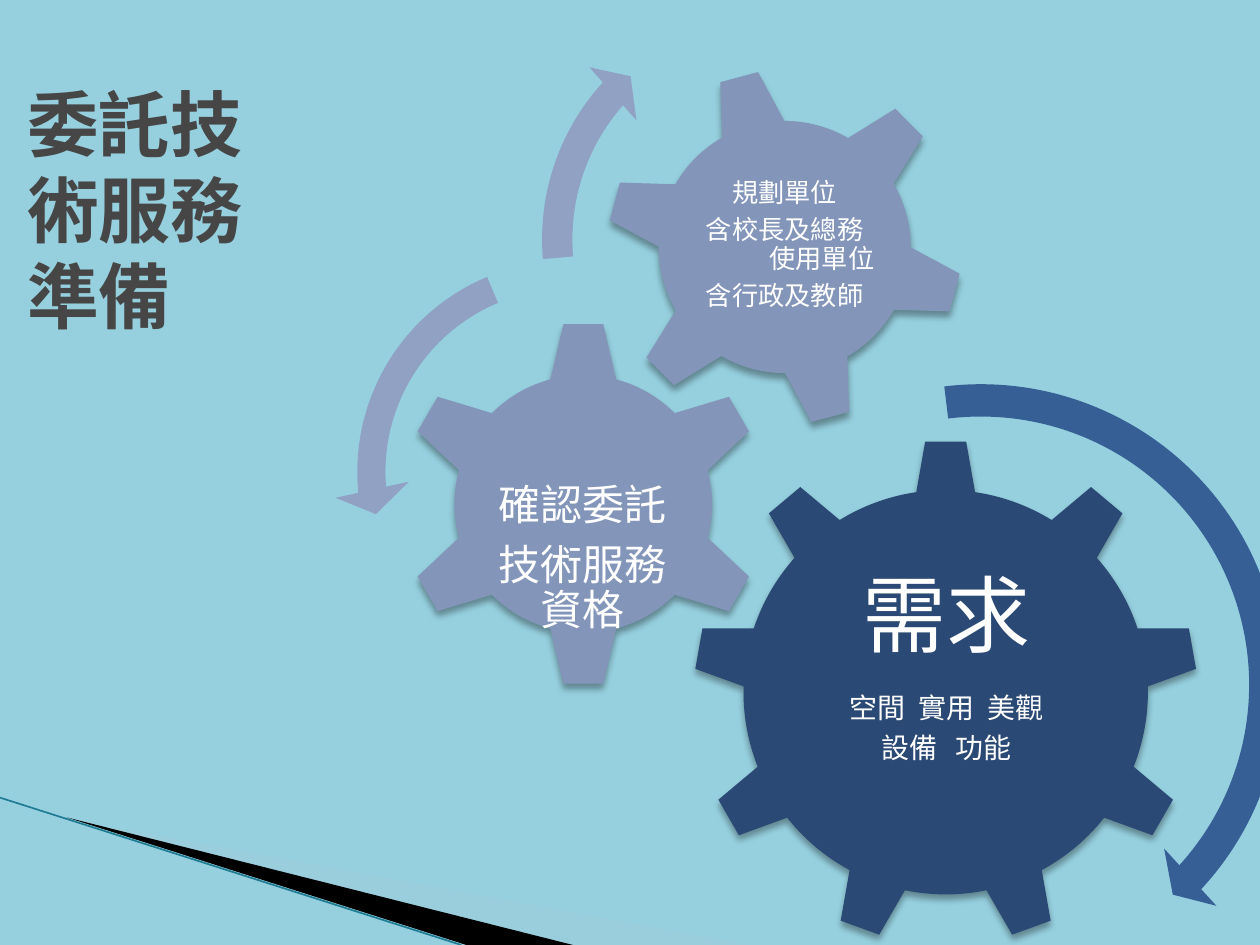
from lxml import etree
from pptx import Presentation
from pptx.dml.color import RGBColor
from pptx.enum.shapes import MSO_CONNECTOR, MSO_SHAPE as Preset
from pptx.enum.text import MSO_ANCHOR as Anchor, PP_ALIGN as Align
from pptx.oxml.ns import qn
from pptx.util import Cm, Pt

FONT = "DejaVu Sans Mono"
NAVY, BLUE, PALE_BLUE, LILAC = "2A4974", "365F96", "8396BA", "90A1C3"


def color(value):
    return RGBColor.from_string(value)


def paint(shape, fill):
    shape.shadow.inherit = False
    shape.fill.solid()
    shape.fill.fore_color.rgb = color(fill)
    shape.line.fill.background()


def set_alpha(parent, percent):
    etree.SubElement(parent, qn("a:alpha"), val=str(percent * 1000))


def add_preset(page, kind, left, top, size, fill):
    shape = page.shapes.add_shape(kind, Cm(left), Cm(top), Cm(size), Cm(size))
    paint(shape, fill)
    return shape


def add_gear(page, kind, left, top, size, fill, rotation=0):
    gear = add_preset(page, kind, left, top, size, fill)
    gear.rotation = rotation
    effects = gear._element.spPr.find(qn("a:effectLst"))
    shadow = etree.SubElement(
        effects, qn("a:outerShdw"), blurRad=str(Pt(4)), dist=str(Pt(3)),
        dir="5400000", algn="ctr", rotWithShape="0",
    )
    set_alpha(etree.SubElement(shadow, qn("a:srgbClr"), val="000000"), 35)


def add_arrow(page, kind, left, top, size, fill, adjustments):
    arrow = add_preset(page, kind, left, top, size, fill)
    for index, value in enumerate(adjustments):
        arrow.adjustments[index] = value


def add_wedge(page, points, fill, alpha=100):
    start, *rest = [(Cm(x), Cm(y)) for x, y in points]
    builder = page.shapes.build_freeform(*start)
    builder.add_line_segments(rest, close=True)
    wedge = builder.convert_to_shape()
    paint(wedge, fill)
    if alpha < 100:
        set_alpha(wedge._element.spPr.find(".//" + qn("a:srgbClr")), alpha)


def add_line(page, start, end, stroke, width):
    points = [Cm(value) for value in start + end]
    line = page.shapes.add_connector(MSO_CONNECTOR.STRAIGHT, *points)
    line.line.color.rgb = color(stroke)
    line.line.width = Pt(width)
    etree.SubElement(line._element.spPr, qn("a:effectLst"))


def add_box(page, left, top, width, height, inset):
    box = page.shapes.add_textbox(Cm(left), Cm(top), Cm(width), Cm(height))
    frame = box.text_frame
    frame.word_wrap = True
    frame.vertical_anchor = Anchor.MIDDLE
    frame.margin_left = frame.margin_right = Cm(inset)
    frame.margin_top = frame.margin_bottom = Cm(inset)
    return frame


def write(frame, text, size, fill="FFFFFF", bold=False, align=Align.CENTER,
          spacing=0.9, after=0.35, indent=0, word_gap=0):
    para = frame.paragraphs[0]
    if para.runs:
        para = frame.add_paragraph()
    para.alignment = align
    para.line_spacing = spacing
    para.space_after = Pt(size * after)
    if indent:
        properties = para._p.get_or_add_pPr()
        properties.set("marL", "0")
        properties.set("indent", str(Cm(indent)))
    for number, word in enumerate(text.split(" ")):
        pieces = [" ", word] if number else [word]
        for piece in pieces:
            span = para.add_run()
            span.text = piece
            span.font.name = FONT
            span.font.size = Pt(size)
            span.font.bold = bold
            span.font.color.rgb = color(fill)
            if piece == " ":
                span._r.get_or_add_rPr().set("spc", str(word_gap * 100))


def add_background(page):
    page.background.fill.solid()
    page.background.fill.fore_color.rgb = color("96D0DF")
    add_wedge(page, [(1.4, 16.51), (15.11, 19.05), (11.58, 19.05)],
              "A0CBDC", alpha=40)
    add_wedge(page, [(1.35, 16.48), (11.55, 19.05), (9.4, 19.05)], "000000")
    add_line(page, (0, 16.08), (9.3, 19.05), "1F7C93", 0.95)


def add_gears(page):
    add_gear(page, Preset.GEAR_9, 13.97, 8.86, 10.19, NAVY)
    needs = add_box(page, 16.03, 10.87, 6.1, 5.23, 0.18)
    write(needs, "需求", 48, indent=-0.76)
    write(needs, "空間 實用 美觀", 16, word_gap=4)
    write(needs, "設備 功能", 16, word_gap=7)

    add_gear(page, Preset.GEAR_6, 8.05, 6.45, 7.42, PALE_BLUE)
    qualification = add_box(page, 9.91, 9.45, 3.68, 3.66, 0.05)
    write(qualification, "確認委託", 24)
    write(qualification, "技術服務資格", 24)

    add_gear(page, Preset.GEAR_6, 12.19, 1.35, 7.26, PALE_BLUE, rotation=345)
    units = add_box(page, 13.79, 2.92, 4.06, 4.06, 0.05)
    write(units, "規劃單位", 15)
    write(units, "含校長及總務", 15, after=0, indent=-0.73)
    write(units, "使用單位", 15, indent=1.5)
    write(units, "含行政及教師", 15)


def add_arrows(page):
    add_arrow(page, Preset.CIRCULAR_ARROW, 13.26, 7.29, 13.03, BLUE,
              (0.05, 2.99, 25.55, 157.8, 0.06))
    add_arrow(page, Preset.LEFT_CIRCULAR_ARROW, 6.73, 4.78, 9.47, LILAC,
              (0.06, 4.3, 104.89, 148.38, 0.08))
    add_arrow(page, Preset.CIRCULAR_ARROW, 10.52, -0.28, 10.21, LILAC,
              (0.06, 3.94, 133.14, 105.08, 0.07))


def main():
    deck = Presentation()
    deck.slide_width, deck.slide_height = Cm(25.4), Cm(19.05)
    page = deck.slides.add_slide(deck.slide_layouts[6])
    add_background(page)
    add_gears(page)
    add_arrows(page)
    title = add_box(page, 0.3, 0.91, 6.15, 6.6, 0.25)
    write(title, "委託技術服務準備", 41, fill="464646", bold=True,
          align=Align.LEFT, spacing=1.0, after=0)
    deck.save("out.pptx")


if __name__ == "__main__":
    main()
